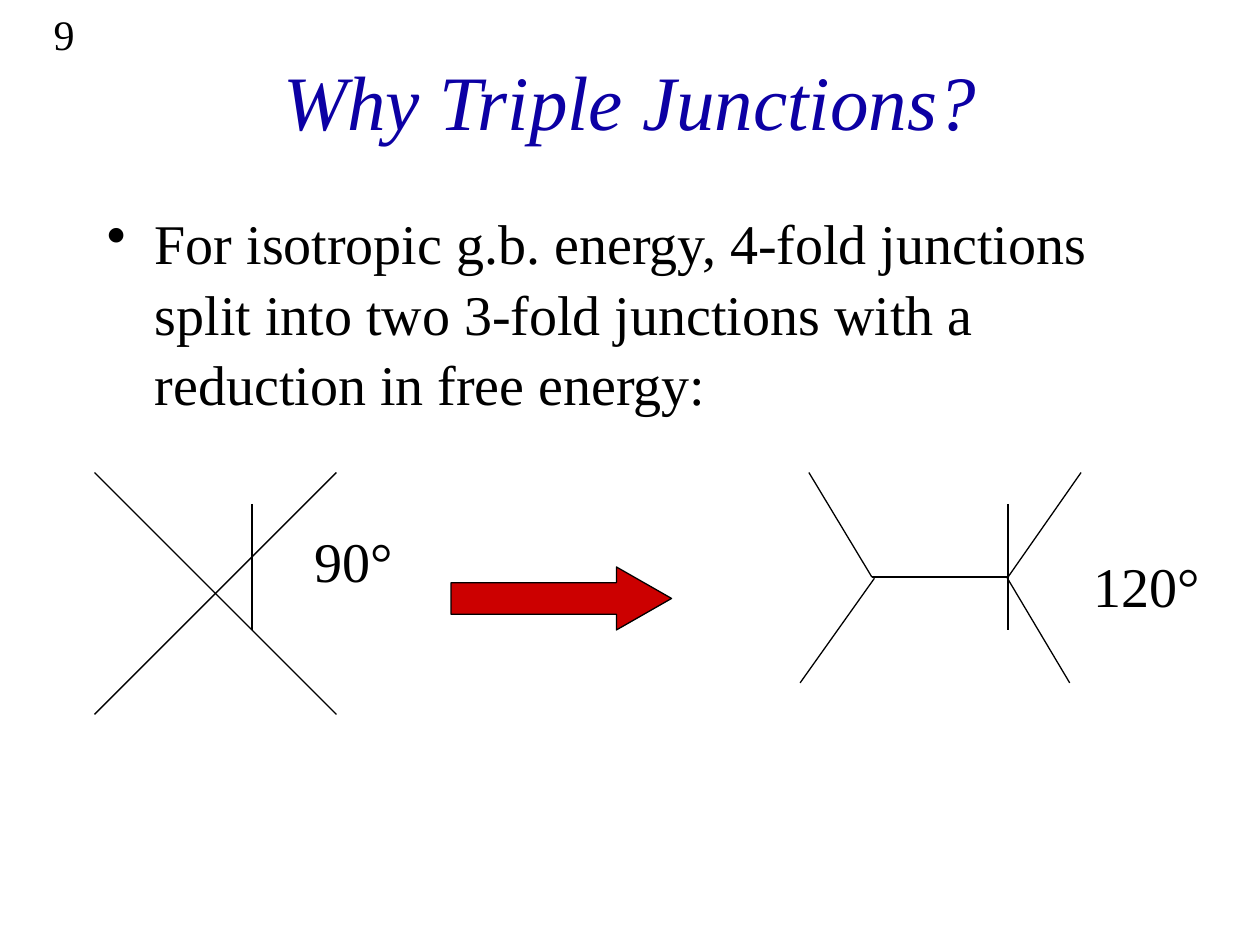
from lxml import etree
from pptx import Presentation
from pptx.dml.color import RGBColor
from pptx.enum.shapes import MSO_CONNECTOR, MSO_SHAPE
from pptx.enum.text import MSO_ANCHOR, PP_ALIGN
from pptx.oxml.ns import qn
from pptx.util import Inches, Pt

STRAIGHT = MSO_CONNECTOR.STRAIGHT
RIGHT_ARROW = MSO_SHAPE.RIGHT_ARROW
MIDDLE = MSO_ANCHOR.MIDDLE
LEFT, CENTER, RIGHT = PP_ALIGN.LEFT, PP_ALIGN.CENTER, PP_ALIGN.RIGHT

FONT = "Times New Roman"
COLORS = {"ink": "000000", "title": "0C00A4", "arrow": "CC0000"}
LINE_WIDTH = Pt(0.75)
CURVE_STEPS = 12

TITLE = "Why Triple Junctions?"
BODY = ("For isotropic g.b. energy, 4-fold junctions split into two "
        "3-fold junctions with a reduction in free energy:")
LABELS = [
    ("9", (0.02, 0.02, 0.67, 0.42), 24, RIGHT, True),
    ("90°", (2.4, 4.13, 0.82, 0.63), 32, LEFT, False),
    ("120°", (8.58, 4.33, 1.05, 0.63), 32, LEFT, False),
]
FOURFOLD_LINES = [((0.75, 3.75), (2.67, 5.67)), ((0.75, 5.67), (2.67, 3.75))]
THREEFOLD_LINES = [
    ((6.92, 4.58), (8, 4.58)),
    ((8, 4.58), (8.58, 3.75)),
    ((6.35, 5.42), (6.94, 4.59)),
    ((6.92, 4.58), (6.42, 3.75)),
    ((8.49, 5.42), (7.99, 4.58)),
]
ANGLE_ARCS = [
    [(1.92, 4.5), (1.94, 4.52), (1.97, 4.54), (2, 4.58), (2.03, 4.62),
     (2.08, 4.69), (2.08, 4.75), (2.08, 4.81), (2.04, 4.86), (2, 4.92)],
    [(8.25, 4.25), (8.28, 4.29), (8.31, 4.33), (8.33, 4.4), (8.36, 4.47),
     (8.43, 4.6), (8.42, 4.7), (8.4, 4.8), (8.33, 4.9), (8.25, 5)],
]


def color(name):
    return RGBColor.from_string(COLORS[name])


def write(box, text, size, align=LEFT, ink="ink", italic=False):
    box.text_frame.text = text
    para = box.text_frame.paragraphs[0]
    para.alignment = align
    font = para.runs[0].font
    font.name, font.size, font.italic = FONT, Pt(size), italic
    font.color.rgb = color(ink)
    return para


def add_text(page, text, place, size, align=LEFT, wrap=True):
    box = page.shapes.add_textbox(*map(Inches, place))
    box.text_frame.word_wrap = wrap
    return write(box, text, size, align)


def outline(shape):
    shape.line.color.rgb = color("ink")
    shape.line.width = LINE_WIDTH


def add_line(page, start, end):
    line = page.shapes.add_connector(STRAIGHT, *map(Inches, start + end))
    outline(line)
    etree.SubElement(line._element.spPr, qn("a:effectLst"))


def curve_points(controls):
    points = [controls[0]]
    for first in range(0, len(controls) - 1, 3):
        segment = controls[first:first + 4]
        for step in range(1, CURVE_STEPS + 1):
            t = step / CURVE_STEPS
            weights = ((1 - t) ** 3, 3 * t * (1 - t) ** 2, 3 * t ** 2 * (1 - t), t ** 3)
            points.append(tuple(sum(w * v for w, v in zip(weights, axis))
                                for axis in zip(*segment)))
    return points


def add_arc(page, controls):
    points = curve_points(controls)
    builder = page.shapes.build_freeform(*points[0], scale=Inches(1))
    builder.add_line_segments(points[1:], close=False)
    arc = builder.convert_to_shape()
    arc.shadow.inherit = False
    arc.fill.background()
    outline(arc)


def add_title(page):
    title = page.shapes.title
    title.left, title.top, title.width, title.height = map(Inches, (0.75, 0.17, 8.5, 1.25))
    title.text_frame.vertical_anchor = MIDDLE
    write(title, TITLE, 44, CENTER, "title", True)


def add_body(page):
    para = add_text(page, BODY, (0.75, 1.58, 8.5, 1.25), 32)
    para.space_before = Pt(2)
    para.line_spacing = 1.05
    properties = para._p.get_or_add_pPr()
    properties.set("marL", str(Inches(0.38)))
    properties.set("indent", str(-Inches(0.38)))
    etree.SubElement(properties, qn("a:buChar")).set("char", "•")


def add_arrow(page):
    arrow = page.shapes.add_shape(RIGHT_ARROW, *map(Inches, (3.58, 4.5, 1.75, 0.5)))
    arrow.adjustments[0], arrow.adjustments[1] = 0.5, 0.875
    arrow.shadow.inherit = False
    arrow.fill.solid()
    arrow.fill.fore_color.rgb = color("arrow")
    outline(arrow)


def main():
    deck = Presentation()
    deck.slide_width, deck.slide_height = Inches(10), Inches(7.5)
    page = deck.slides.add_slide(deck.slide_layouts[5])
    add_title(page)
    add_body(page)
    for start, end in FOURFOLD_LINES + THREEFOLD_LINES:
        add_line(page, start, end)
    add_arrow(page)
    for controls in ANGLE_ARCS:
        add_arc(page, controls)
    for label in LABELS:
        add_text(page, *label)
    deck.save("out.pptx")


if __name__ == "__main__":
    main()
